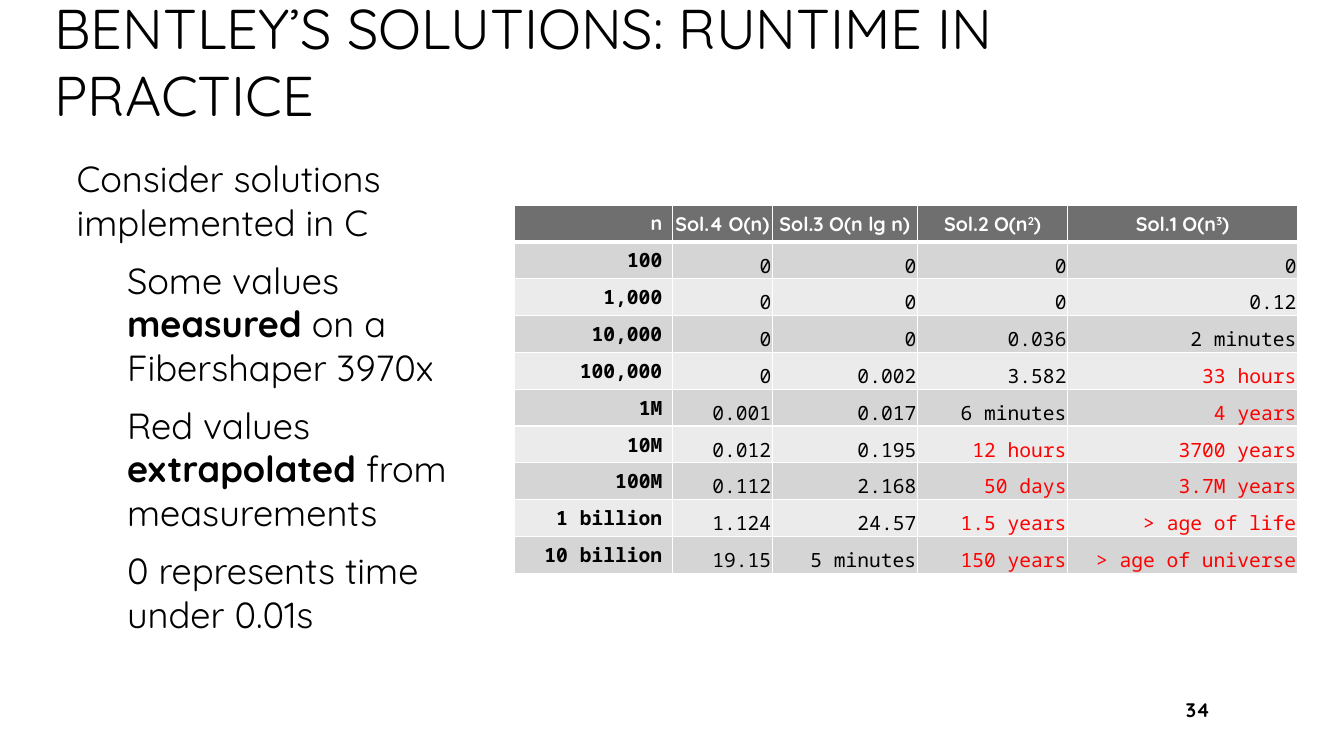
import pptx
import pptx.util
import pptx.dml.color
import pptx.enum.text
import lxml.etree

# Content
TITLE = "BENTLEY’S SOLUTIONS: RUNTIME IN PRACTICE"
SLIDE_NUMBER = "34"
# Each point: level, then runs as (text, bold)
POINTS = [
    (0, [("Consider solutions implemented in C", False)]),
    (1, [("Some values ", False), ("measured ", True), ("on a Fibershaper 3970x", False)]),
    (1, [("Red values ", False), ("extrapolated ", True), ("from measurements", False)]),
    (1, [("0 represents time under 0.01s", False)]),
]
# Each heading: plain text, superscript, plain text
HEADINGS = [("n",), ("Sol.4 O(n)",), ("Sol.3 O(n lg n)",),
            ("Sol.2 O(n", "2", ")"), ("Sol.1 O(n", "3", ")")]
RUNTIMES = [
    ("100", "0", "0", "0", "0"),
    ("1,000", "0", "0", "0", "0.12"),
    ("10,000", "0", "0", "0.036", "2 minutes"),
    ("100,000", "0", "0.002", "3.582", "33 hours"),
    ("1M", "0.001", "0.017", "6 minutes", "4 years"),
    ("10M", "0.012", "0.195", "12 hours", "3700 years"),
    ("100M", "0.112", "2.168", "50 days", "3.7M years"),
    ("1 billion", "1.124", "24.57", "1.5 years", "> age of life"),
    ("10 billion", "19.15", "5 minutes", "150 years", "> age of universe"),
]
EXTRAPOLATED_UNITS = ("hours", "days", "years", "life", "universe")

# Layout and style
COLUMN_WIDTHS = [1.57, 0.99, 1.44, 1.49, 2.28]
HEADING_HEIGHT, ROW_HEIGHT = 0.36, 0.3
INDENTS = [0.31, 0.81]
SANS, MONO = "Quicksand", "Noto Sans Mono"
BLACK, WHITE, RED = "000000", "FFFFFF", "FF0000"
HEADING_FILL, BAND_FILLS = "6F6F6F", ("D5D5D5", "EBEBEB")

Inches, Pt = pptx.util.Inches, pptx.util.Pt
Align, Anchor = pptx.enum.text.PP_ALIGN, pptx.enum.text.MSO_ANCHOR
qn = pptx.oxml.ns.qn


def color(hex_string):
    return pptx.dml.color.RGBColor.from_string(hex_string)


def style(paragraph, size, hex_string=BLACK, name=SANS, bold=False, align=Align.LEFT):
    paragraph.alignment = align
    font = paragraph.font
    font.size, font.name, font.bold = Pt(size), name, bold
    font.color.rgb = color(hex_string)


def place(shape, left, top, width, height):
    shape.left, shape.top = Inches(left), Inches(top)
    shape.width, shape.height = Inches(width), Inches(height)
    shape.text_frame.word_wrap = True
    shape.text_frame.auto_size = pptx.enum.text.MSO_AUTO_SIZE.NONE


def add_border(cell, side, width):
    line = lxml.etree.SubElement(cell._tc.get_or_add_tcPr(), qn("a:ln" + side),
                                 w=str(Pt(width)))
    fill = lxml.etree.SubElement(line, qn("a:solidFill"))
    lxml.etree.SubElement(fill, qn("a:srgbClr"), val=WHITE)


def format_cell(cell, row, column):
    for side in "LRTB":
        under_heading = (row, side) in ((0, "B"), (1, "T"))
        add_border(cell, side, 3 if under_heading else 1)
    cell.fill.solid()
    cell.fill.fore_color.rgb = color(BAND_FILLS[(row - 1) % 2] if row else HEADING_FILL)
    if column:
        cell.margin_left = cell.margin_right = cell.margin_top = Inches(0.01)
        cell.margin_bottom = 0
        cell.vertical_anchor = Anchor.BOTTOM if row else Anchor.MIDDLE


presentation = pptx.Presentation()
presentation.slide_width, presentation.slide_height = Inches(13.33), Inches(7.5)
slide = presentation.slides.add_slide(presentation.slide_layouts[1])

# Title
title = slide.shapes.title
place(title, 0.44, 0.04, 12.17, 1.12)
title.text_frame.text = TITLE
title.text_frame.vertical_anchor = Anchor.MIDDLE
style(title.text_frame.paragraphs[0], 40)

# Points
body = slide.placeholders[1]
place(body, 0.35, 1.5, 4.46, 5.11)
for index, (level, runs) in enumerate(POINTS):
    frame = body.text_frame
    paragraph = frame.add_paragraph() if index else frame.paragraphs[0]
    paragraph.level = level
    properties = paragraph._p.get_or_add_pPr()
    properties.set("marL", str(Inches(INDENTS[level])))
    properties.set("indent", "0")
    lxml.etree.SubElement(properties, qn("a:buNone"))
    paragraph.space_before, paragraph.space_after = Pt(4.4 if index else 0), Pt(6)
    style(paragraph, 25.9)
    for text, bold in runs:
        run = paragraph.add_run()
        run.text = text
        if bold:
            run.font.bold = True

# Slide number
number = slide.shapes.add_textbox(0, 0, 0, 0)
place(number, 11.5, 6.84, 0.6, 0.4)
number.text_frame.text = SLIDE_NUMBER
number.text_frame.vertical_anchor = Anchor.MIDDLE
style(number.text_frame.paragraphs[0], 14, bold=True, align=Align.RIGHT)

# Runtime table
row_count = 1 + len(RUNTIMES)
table = slide.shapes.add_table(
    row_count, len(HEADINGS), Inches(5.1), Inches(2.04), Inches(sum(COLUMN_WIDTHS)),
    Inches(HEADING_HEIGHT + ROW_HEIGHT * len(RUNTIMES))).table
for column, width in zip(table.columns, COLUMN_WIDTHS):
    column.width = Inches(width)
for index, row in enumerate(table.rows):
    row.height = Inches(ROW_HEIGHT if index else HEADING_HEIGHT)

for column, pieces in enumerate(HEADINGS):
    cell = table.cell(0, column)
    format_cell(cell, 0, column)
    paragraph = cell.text_frame.paragraphs[0]
    style(paragraph, 14, WHITE, bold=True, align=Align.CENTER if column else Align.RIGHT)
    for position, text in enumerate(pieces):
        run = paragraph.add_run()
        run.text = text
        if position == 1:
            run._r.get_or_add_rPr().set("baseline", "30000")

for row, values in enumerate(RUNTIMES, start=1):
    for column, value in enumerate(values):
        cell = table.cell(row, column)
        format_cell(cell, row, column)
        cell.text_frame.text = value
        extrapolated = value.endswith(EXTRAPOLATED_UNITS)
        style(cell.text_frame.paragraphs[0], 14, RED if extrapolated else BLACK,
              MONO, bold=column == 0, align=Align.RIGHT)

presentation.save("out.pptx")
